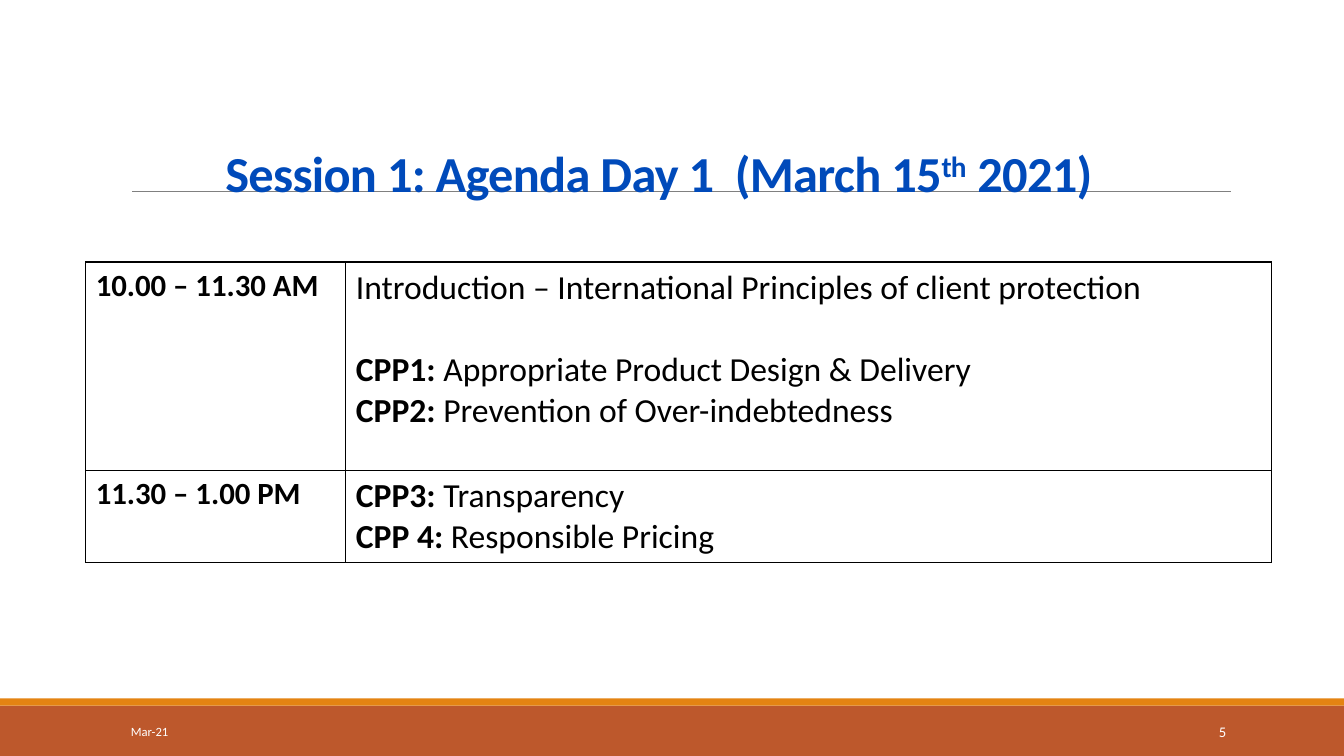
from lxml.etree import SubElement
from pptx import Presentation
from pptx.dml.color import RGBColor
from pptx.enum.shapes import MSO_CONNECTOR, MSO_SHAPE
from pptx.enum.text import MSO_ANCHOR, PP_ALIGN
from pptx.oxml import parse_xml
from pptx.oxml.ns import nsdecls, qn
from pptx.util import Inches, Pt

BLACK, WHITE, BLUE = "000000", "FFFFFF", "004ABA"
ORANGE, RUST, GREY = "E48312", "BD582C", "808080"

# Each agenda entry is (bold label, plain text, space before in points)
AGENDA = [
    ("10.00 – 11.30 AM", [
        ("", "Introduction – International Principles of client protection", 0),
        ("CPP1: ", "Appropriate Product Design & Delivery", 29.3),
        ("CPP2: ", "Prevention of Over-indebtedness", 0),
    ]),
    ("11.30 – 1.00 PM", [
        ("CPP3: ", "Transparency", 0),
        ("CPP 4: ", "Responsible Pricing", 0),
    ]),
]


def color(hex_value):
    return RGBColor.from_string(hex_value)


def add_run(paragraph, text, size, hex_value, bold=False):
    run = paragraph.add_run()
    run.text = text
    formats = {"name": "Calibri", "size": Pt(size), "bold": bold}
    for attribute, value in formats.items():
        setattr(run.font, attribute, value)
    run.font.color.rgb = color(hex_value)
    return run


def add_band(slide, box, hex_value):
    band = slide.shapes.add_shape(MSO_SHAPE.RECTANGLE, *map(Inches, box))
    band.shadow.inherit = False
    band.fill.solid()
    band.fill.fore_color.rgb = color(hex_value)
    band.line.fill.background()


def add_footer_text(slide, box, text, size, alignment):
    footer = slide.shapes.add_textbox(*map(Inches, box)).text_frame
    footer.word_wrap = True
    footer.vertical_anchor = MSO_ANCHOR.MIDDLE
    footer.paragraphs[0].alignment = alignment
    add_run(footer.paragraphs[0], text, size, WHITE)


def build_footer(slide, box):
    left, top, width, height = box
    stripe = 0.07
    add_band(slide, (left, top + stripe, width, height - stripe), RUST)
    add_band(slide, (left, top, width, stripe), ORANGE)
    text_top = top + 0.13
    add_footer_text(slide, (left + 1.2, text_top, 2.7, 0.4), "Mar-21", 9, PP_ALIGN.LEFT)
    add_footer_text(slide, (left + width - 2.5, text_top, 1.43, 0.4), "5", 10.5, PP_ALIGN.RIGHT)


def build_title(slide, box):
    left, top, width, height = box
    # Rule that runs behind the heading
    rule_y = Inches(top + 0.64)
    rule = slide.shapes.add_connector(
        MSO_CONNECTOR.STRAIGHT, Inches(left + 0.81), rule_y, Inches(left + 11.71), rule_y)
    rule.line.color.rgb = color(GREY)
    rule.line.width = Pt(0.5)
    SubElement(rule._element.spPr, qn("a:effectLst"))

    # Heading, brought in front of the rule
    heading = slide.shapes.title
    slide.shapes._spTree.append(heading._element)
    placement = {"left": left, "top": top, "width": width, "height": height}
    for side, value in placement.items():
        setattr(heading, side, Inches(value))
    heading.text_frame.vertical_anchor = MSO_ANCHOR.BOTTOM
    heading.text_frame.word_wrap = True
    paragraph = heading.text_frame.paragraphs[0]
    paragraph.alignment = PP_ALIGN.CENTER
    paragraph.line_spacing = 0.85
    for text, baseline in (
            ("Session 1: Agenda Day 1  (March 15", 0), ("th", 30000), (" 2021)", 0)):
        properties = add_run(paragraph, text, 36, BLUE, True).font._element
        properties.set("spc", "-50")
        properties.set("baseline", str(baseline))


def format_cell(cell):
    cell.fill.background()
    for position, side in enumerate(("lnL", "lnR", "lnT", "lnB")):
        border = parse_xml(
            f'<a:{side} {nsdecls("a")} w="12700"><a:solidFill>'
            f'<a:srgbClr val="{BLACK}"/></a:solidFill></a:{side}>')
        cell._tc.get_or_add_tcPr().insert(position, border)


def build_agenda(slide, box):
    table = slide.shapes.add_table(len(AGENDA), 2, *map(Inches, box)).table
    table.first_row = table.horz_banding = False
    for column, width in zip(table.columns, (2.58, box[2] - 2.58)):
        column.width = Inches(width)
    for row, height in zip(table.rows, (2.07, box[3] - 2.07)):
        row.height = Inches(height)

    for row, (time, topics) in zip(table.rows, AGENDA):
        time_cell, topic_cell = row.cells
        format_cell(time_cell)
        format_cell(topic_cell)
        add_run(time_cell.text_frame.paragraphs[0], time, 22, BLACK, True)
        frame = topic_cell.text_frame
        for index, (label, topic, gap) in enumerate(topics):
            paragraph = frame.add_paragraph() if index else frame.paragraphs[0]
            paragraph.space_before = Pt(gap)
            if label:
                add_run(paragraph, label, 24, BLACK, True)
            add_run(paragraph, topic, 24, BLACK)


def main():
    deck = Presentation()
    deck.slide_width, deck.slide_height = Inches(13.33), Inches(7.5)
    slide = deck.slides.add_slide(deck.slide_layouts[5])
    build_footer(slide, (0, 6.93, 13.33, 0.57))
    build_title(slide, (0.5, 1.26, 12.07, 0.8))
    build_agenda(slide, (0.85, 2.6, 11.76, 2.97))
    deck.save("out.pptx")


if __name__ == "__main__":
    main()
